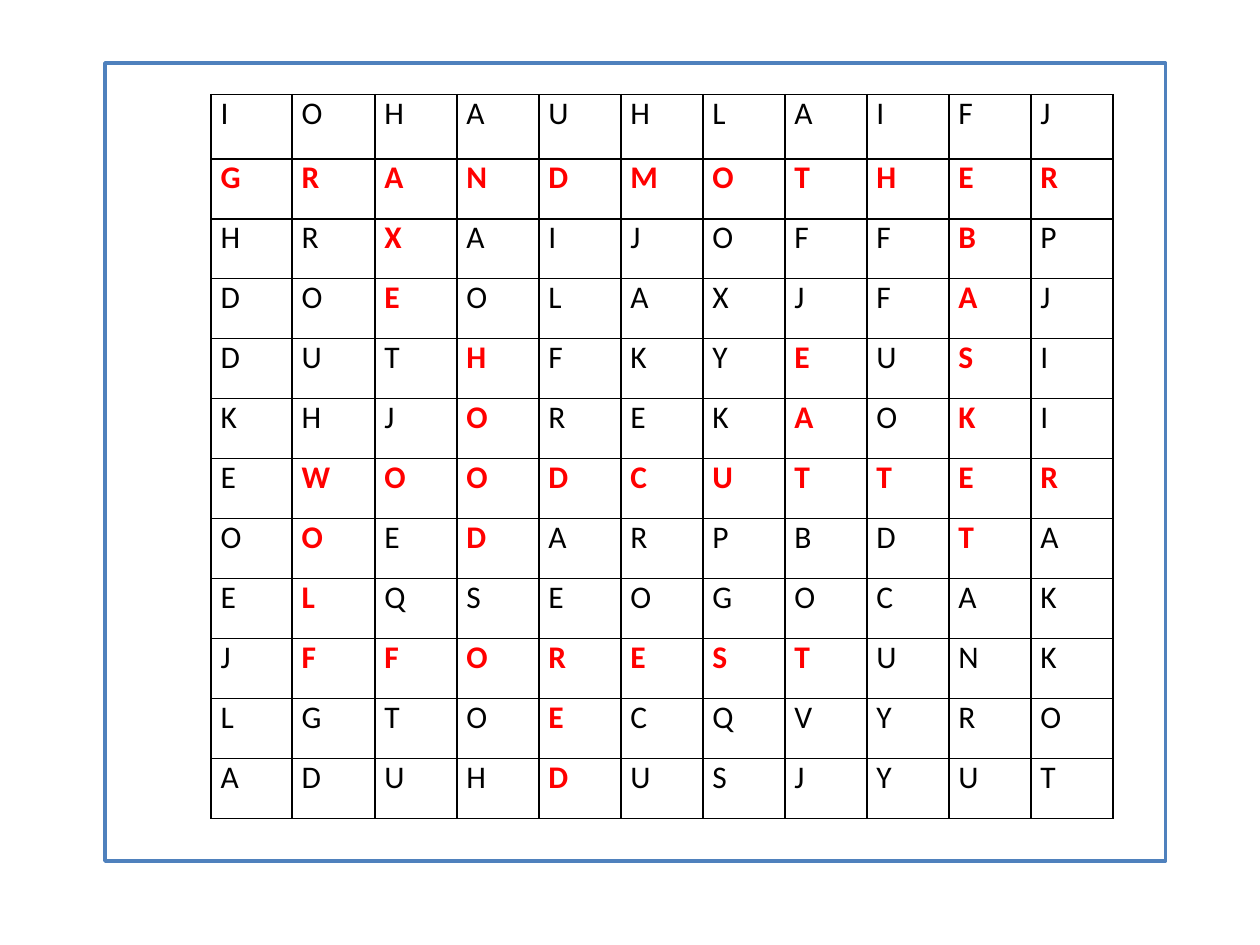
from dataclasses import dataclass

from lxml.etree import SubElement
from pptx import Presentation
from pptx.dml.color import RGBColor as RGB
from pptx.enum.shapes import MSO_SHAPE as SHAPE
from pptx.oxml.ns import qn
from pptx.util import Pt


@dataclass(frozen=True)
class Theme:
    font: str = "Calibri"
    size: int = 18
    ink: str = "000000"
    found: str = "FF0000"
    paper: str = "FFFFFF"
    frame: str = "4F81BD"
    frame_width: float = 2
    grid_width: float = 1


THEME = Theme()

# Content: letter grid and hidden words
LETTERS = [
    "IOHAUHLAIFJ",
    "GRANDMOTHER",
    "HRXAIJOFFBP",
    "DOEOLAXJFAJ",
    "DUTHFKYEUSI",
    "KHJOREKAOKI",
    "EWOODCUTTER",
    "OOEDARPBDTA",
    "ELQSEOGOCAK",
    "JFFORESTUNK",
    "LGTOECQVYRO",
    "ADUHDUSJYUT",
]
ACROSS, DOWN = (0, 1), (1, 0)
WORDS = [  # word, first row, first column, direction
    ("GRANDMOTHER", 1, 0, ACROSS),
    ("AXE", 1, 2, DOWN),
    ("BASKET", 2, 9, DOWN),
    ("HOOD", 4, 3, DOWN),
    ("EAT", 4, 7, DOWN),
    ("WOODCUTTER", 6, 1, ACROSS),
    ("WOLF", 6, 1, DOWN),
    ("FOREST", 9, 2, ACROSS),
    ("RED", 9, 4, DOWN),
]

# Layout in points
FRAME = (60, 36, 606, 456)
GRID_LEFT, GRID_TOP = 120.7, 54
ROWS, COLS = len(LETTERS), len(LETTERS[0])
ROW_HEIGHTS = [36.75] + [34.29] * (ROWS - 1)
COL_WIDTHS = [46.3, 47.3] + [46.86] * (COLS - 2)
SIDE_MARGIN = 5.4


def set_borders(cell):
    tc_pr = cell._tc.get_or_add_tcPr()
    for i, side in enumerate(("a:lnL", "a:lnR", "a:lnT", "a:lnB")):
        ln = SubElement(tc_pr, qn(side), w=str(Pt(THEME.grid_width)))
        fill = SubElement(ln, qn("a:solidFill"))
        SubElement(fill, qn("a:srgbClr"), val=THEME.ink)
        tc_pr.insert(i, ln)  # lines come before the fill


def fill_cell(cell, letter, is_found):
    cell.margin_left = cell.margin_right = Pt(SIDE_MARGIN)
    cell.margin_top = cell.margin_bottom = 0
    cell.fill.background()
    set_borders(cell)
    cell.text_frame.text = letter
    font = cell.text_frame.paragraphs[0].runs[0].font
    font.name, font.size, font.bold = THEME.font, Pt(THEME.size), is_found
    font.color.rgb = RGB.from_string(THEME.found if is_found else THEME.ink)


def main():
    prs = Presentation()
    prs.slide_width, prs.slide_height = Pt(720), Pt(540)
    slide = prs.slides.add_slide(prs.slide_layouts[6])

    # Frame
    sp = slide.shapes.add_shape(SHAPE.RECTANGLE, *map(Pt, FRAME))
    sp.shadow.inherit = False
    sp.fill.solid()
    sp.fill.fore_color.rgb = RGB.from_string(THEME.paper)
    sp.line.color.rgb = RGB.from_string(THEME.frame)
    sp.line.width = Pt(THEME.frame_width)

    # Word search grid
    found = {(row + i * dy, col + i * dx)
             for word, row, col, (dy, dx) in WORDS for i in range(len(word))}
    table = slide.shapes.add_table(
        ROWS, COLS, Pt(GRID_LEFT), Pt(GRID_TOP),
        Pt(sum(COL_WIDTHS)), Pt(sum(ROW_HEIGHTS))).table
    table.first_row = table.horz_banding = False
    for column, width in zip(table.columns, COL_WIDTHS):
        column.width = Pt(width)
    for row, height in zip(table.rows, ROW_HEIGHTS):
        row.height = Pt(height)
    for r, line in enumerate(LETTERS):
        for c, letter in enumerate(line):
            fill_cell(table.cell(r, c), letter, (r, c) in found)

    prs.save("out.pptx")


if __name__ == "__main__":
    main()
